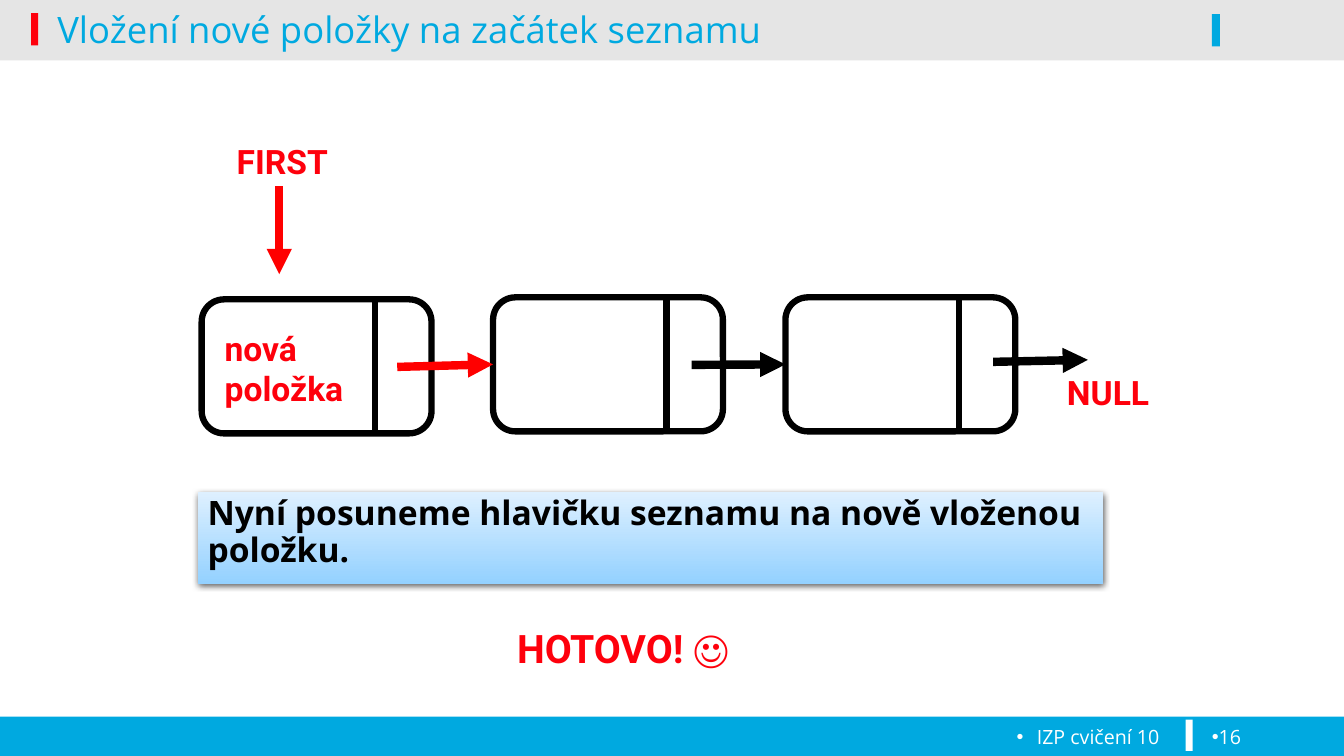
from lxml.etree import SubElement
from pptx import Presentation
from pptx.dml.color import RGBColor
from pptx.enum.shapes import MSO_CONNECTOR, MSO_SHAPE
from pptx.enum.text import MSO_ANCHOR, PP_ALIGN
from pptx.oxml.ns import qn
from pptx.util import Inches, Pt

BLUE = RGBColor(0x00, 0xA9, 0xE0)
GRAY = RGBColor(0xE5, 0xE5, 0xE5)
RED = RGBColor(0xFE, 0x00, 0x0C)
ARROW_RED = RGBColor(0xFF, 0x00, 0x00)
WHITE = RGBColor(0xFF, 0xFF, 0xFF)
BLACK = RGBColor(0x00, 0x00, 0x00)
BANNER_DARK = RGBColor(0x94, 0xD1, 0xFF)
BANNER_LIGHT = RGBColor(0xDE, 0xF0, 0xFF)


def add_box(s, x, y, w, h, fill, kind=MSO_SHAPE.RECTANGLE):
    """Add a plain filled shape without outline or shadow."""
    sp = s.shapes.add_shape(kind, Inches(x), Inches(y), Inches(w), Inches(h))
    sp.shadow.inherit = False
    sp.fill.solid()
    sp.fill.fore_color.rgb = fill
    sp.line.fill.background()
    return sp


def set_text(sp, text, size, font, color, bold=False, align=PP_ALIGN.LEFT,
             anchor=MSO_ANCHOR.TOP):
    """Write one formatted paragraph into a shape and return it."""
    tf = sp.text_frame
    tf.word_wrap = True
    tf.vertical_anchor = anchor
    p = tf.paragraphs[0]
    p.text = text
    p.alignment = align
    for r in p.runs:
        r.font.size = Pt(size)
        r.font.name = font
        r.font.bold = bold
        r.font.color.rgb = color
    return p


def add_text(s, x, y, w, h, *args, **kwargs):
    """Add a text box holding one formatted paragraph."""
    sp = s.shapes.add_textbox(Inches(x), Inches(y), Inches(w), Inches(h))
    return set_text(sp, *args, **kwargs)


def add_label(s, x, y, w, h, text, size=24, align=PP_ALIGN.CENTER):
    """Add a bold red diagram label."""
    add_text(s, x, y, w, h, text, size, "Roboto", RED, True, align)


def add_bullet(p, indent):
    """Give a paragraph a round bullet with a hanging indent."""
    pPr = p._p.get_or_add_pPr()
    pPr.set("marL", str(Inches(indent)))
    pPr.set("indent", str(-Inches(indent)))
    SubElement(pPr, qn("a:buFont"), typeface="Arial")
    SubElement(pPr, qn("a:buChar"), char="•")


def add_line(s, x1, y1, x2, y2, color, width, arrow=False):
    """Add a straight line, optionally with an arrowhead at its end."""
    cx = s.shapes.add_connector(MSO_CONNECTOR.STRAIGHT, Inches(x1), Inches(y1),
                                Inches(x2), Inches(y2))
    cx.line.color.rgb = color
    cx.line.width = Pt(width)
    if arrow:
        SubElement(cx.line._get_or_add_ln(), qn("a:tailEnd"), type="triangle")
    SubElement(cx._element.spPr, qn("a:effectLst"))
    return cx


def add_header(s, x, y, w, h):
    """Draw the title bar with its two markers."""
    add_box(s, x, y, w, h, GRAY)
    add_box(s, x + 0.31, y + 0.13, 0.07, 0.32, RED)
    add_box(s, x + 12.02, y + 0.14, 0.08, 0.32, BLUE)
    add_text(s, x + 0.47, y - 0.11, 11.5, 0.79,
             "Vložení nové položky na začátek seznamu", 26, "Open Sans", BLUE,
             anchor=MSO_ANCHOR.MIDDLE)


def add_footer(s, x, y, w, h):
    """Draw the bottom bar with course name and page number."""
    add_box(s, x, y, w, h, BLUE)
    add_box(s, x + 11.76, y + 0.03, 0.07, 0.31, WHITE)
    course = add_text(s, x + 0.16, y + 0.03, 11.44, 0.36, "IZP cvičení 10", 14,
                      "Open Sans", WHITE, align=PP_ALIGN.RIGHT)
    add_bullet(course, 0.2)
    page = add_text(s, x + 11.92, y + 0.03, 1.21, 0.36, "16", 14, "Open Sans", WHITE)
    add_bullet(page, 0)


def add_node(s, x, y, w, h, divider_y):
    """Draw a list item split into data and pointer parts."""
    sp = add_box(s, x, y, w, h, WHITE, MSO_SHAPE.ROUNDED_RECTANGLE)
    sp.line.color.rgb = BLACK
    sp.line.width = Pt(4.5)
    add_line(s, x + 1.72, divider_y, x + 1.72, divider_y + h, BLACK, 4.5)
    return sp


def add_linked_list(s, x, y, w, h):
    """Draw the three linked items with head pointer and terminator."""
    add_node(s, x, y + 0.02, w, h, y)
    second = add_node(s, x + 2.89, y, w, h, y + 0.02)
    third = add_node(s, x + 5.79, y, w, h, y)
    links = [(1.94, 0.69, 2.89, 0.66, ARROW_RED, second),
             (4.86, 0.67, 5.79, 0.64, BLACK, third),
             (7.85, 0.64, 8.79, 0.62, BLACK, None)]
    for x1, y1, x2, y2, color, target in links:
        cx = add_line(s, x + x1, y + y1, x + x2, y + y2, color, 6, True)
        if target is not None:
            cx.end_connect(target, 1)
    add_line(s, x + 0.77, y - 1.1, x + 0.77, y - 0.23, ARROW_RED, 6, True)
    add_label(s, x + 0.13, y - 1.6, 1.34, 0.5, "FIRST")
    add_label(s, x + 8.44, y + 0.69, 1.1, 0.5, "NULL")
    add_label(s, x + 0.13, y + 0.25, 1.56, 1.39, "nová\npoložka", align=PP_ALIGN.LEFT)


def add_banner(s, x, y, w, h):
    """Draw the shaded explanation box."""
    sp = add_box(s, x, y, w, h, BANNER_LIGHT)
    sp.fill.gradient()
    sp.fill.gradient_angle = 90
    for stop, color in zip(sp.fill.gradient_stops, (BANNER_DARK, BANNER_LIGHT)):
        stop.color.rgb = color
    effects = sp._element.spPr.find(qn("a:effectLst"))
    shadow = SubElement(effects, qn("a:outerShdw"), blurRad=str(Pt(4.5)),
                        dist=str(Pt(1.5)), dir="5400000", rotWithShape="0")
    tint = SubElement(shadow, qn("a:srgbClr"), val="000000")
    SubElement(tint, qn("a:alpha"), val="63000")
    p = set_text(sp, "Nyní posuneme hlavičku seznamu na nově vloženou položku.",
                 24, "Open Sans", BLACK, True)
    p.line_spacing = 0.9


def main():
    """Build and save the slide."""
    prs = Presentation()
    prs.slide_width, prs.slide_height = Inches(13.33), Inches(7.5)
    s = prs.slides.add_slide(prs.slide_layouts[6])
    add_header(s, 0, 0, 13.33, 0.6)
    add_footer(s, 0, 7.11, 13.33, 0.39)
    add_linked_list(s, 2, 2.95, 2.28, 1.33)
    add_banner(s, 1.96, 4.88, 8.98, 0.91)
    add_label(s, 4.85, 6.14, 2.66, 0.57, "HOTOVO! ☺", 28)
    prs.save("out.pptx")


if __name__ == "__main__":
    main()
